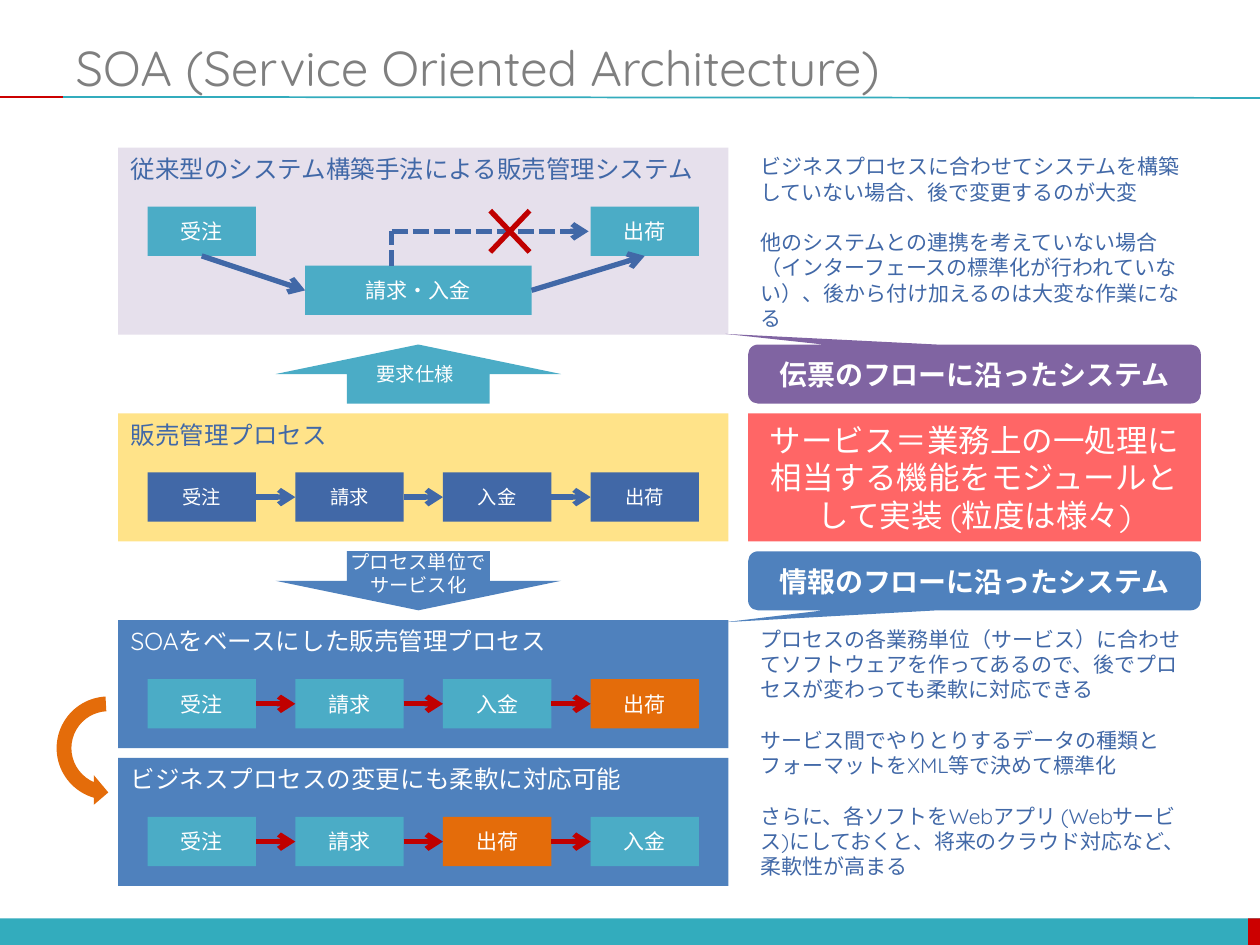
"""Build a slide comparing conventional sales systems with service oriented architecture."""
from lxml import etree
from pptx import Presentation
from pptx import util as u
from pptx.dml.color import RGBColor
from pptx.enum import dml, shapes, text
from pptx.oxml import ns

presentation = Presentation()
presentation.slide_width, presentation.slide_height = u.Inches(10), u.Inches(7.5)
slide = presentation.slides.add_slide(presentation.slide_layouts[5])
unit = presentation.slide_width / 128

FONT = "Quicksand"
WHITE, NAVY, BLUE, TEAL = "FFFFFF", "4168A7", "4F81BD", "4BACC6"
RED, ORANGE, PURPLE, RULE = "C00000", "E46C0A", "8064A2", "33ACBD"
KIND = shapes.MSO_SHAPE
LEFT, CENTER = text.PP_ALIGN.LEFT, text.PP_ALIGN.CENTER
TOP, MIDDLE = text.MSO_ANCHOR.TOP, text.MSO_ANCHOR.MIDDLE
FIRST_COLUMN, STEP, BOX_WIDTH, BOX_HEIGHT = 15, 15, 11, 5
PANEL, PANEL_WIDTH, SIDE, SIDE_WIDTH = 12, 62, 76, 46


def add_block(kind, box, lines=(), fill=None, size=12, color=WHITE, align=CENTER,
              anchor=MIDDLE, bold=False, gap=0, adjustments=()):
    """Place a shape, text box or the title on the grid and format its text."""
    if kind == "title":
        shape = slide.shapes.title
    elif kind == "text":
        shape = slide.shapes.add_textbox(0, 0, 0, 0)
    else:
        shape = slide.shapes.add_shape(kind, 0, 0, 0, 0)
        shape.shadow.inherit = False
        shape.line.fill.background()
        shape.fill.solid()
        shape.fill.fore_color.rgb = RGBColor.from_string(fill)
    for name, value in zip(("left", "top", "width", "height"), box):
        setattr(shape, name, round(value * unit))
    for index, value in enumerate(adjustments):
        shape.adjustments[index] = value
    frame = shape.text_frame
    frame.auto_size = text.MSO_AUTO_SIZE.NONE
    frame.word_wrap, frame.vertical_anchor = True, anchor
    for index, line in enumerate(lines):
        paragraph = frame.add_paragraph() if index else frame.paragraphs[0]
        paragraph.alignment = align
        paragraph.space_before = u.Pt(gap if index else 0)
        run = paragraph.add_run()
        run.text = line
        for name, value in {"name": FONT, "size": u.Pt(size), "bold": bold}.items():
            setattr(run.font, name, value)
        run.font.color.rgb = RGBColor.from_string(color)
    return shape


def add_line(start, end, color, width=3, arrow=True, dash=None):
    """Draw a straight connector between two grid points."""
    points = [round(value * unit) for value in (*start, *end)]
    connector = slide.shapes.add_connector(shapes.MSO_CONNECTOR.STRAIGHT, *points)
    connector.line.width = u.Pt(width)
    connector.line.color.rgb = RGBColor.from_string(color)
    if dash:
        connector.line.dash_style = dash
    properties = connector._element.spPr
    if arrow:
        etree.SubElement(properties.find(ns.qn("a:ln")), ns.qn("a:tailEnd"), type="arrow")
    etree.SubElement(properties, ns.qn("a:effectLst"))


add_block(KIND.RECTANGLE, (0, 93.3, 128, 2.8), fill=RULE)
add_block(KIND.RECTANGLE, (126.8, 93.3, 1.2, 2.8), fill="CC0000")
add_line((6.4, 9.85), (128, 9.95), RULE, width=1, arrow=False)
add_line((0, 9.85), (6.4, 9.85), "CC0000", width=1, arrow=False)
add_block("title", (6.4, 3.84, 121.6, 5.9), ["SOA (Service Oriented Architecture)"],
          size=28, color="7F7F7F", align=LEFT)

panels = [
    (15, 19, "E6E0EC", NAVY, "従来型のシステム構築手法による販売管理システム"),
    (42, 13, "FFE389", NAVY, "販売管理プロセス"),
    (63, 13, BLUE, WHITE, "SOAをベースにした販売管理プロセス"),
    (77, 13, BLUE, WHITE, "ビジネスプロセスの変更にも柔軟に対応可能"),
]
for row, height, fill, color, heading in panels:
    add_block(KIND.ROUNDED_RECTANGLE, (PANEL, row, PANEL_WIDTH, height), [heading], fill, 14,
              color, LEFT, TOP, adjustments=[0])

flows = [
    (48, NAVY, NAVY, 11, ["受注", "請求", "入金", "出荷"], None),
    (69, TEAL, RED, 12, ["受注", "請求", "入金", "出荷"], 3),
    (83, TEAL, RED, 12, ["受注", "請求", "出荷", "入金"], 2),
]
for row, fill, arrow_color, size, steps, highlight in flows:
    middle = row + BOX_HEIGHT / 2
    for index, step in enumerate(steps):
        column = FIRST_COLUMN + index * STEP
        add_block(KIND.ROUNDED_RECTANGLE, (column, row, BOX_WIDTH, BOX_HEIGHT), [step],
                  ORANGE if index == highlight else fill, size, adjustments=[0])
        if index:
            add_line((column - STEP + BOX_WIDTH, middle), (column, middle), arrow_color)

for column, row, width, step in [(15, 21, 11, "受注"), (31, 27, 23, "請求・入金"),
                                 (60, 21, 11, "出荷")]:
    add_block(KIND.ROUNDED_RECTANGLE, (column, row, width, BOX_HEIGHT), [step], TEAL,
              adjustments=[0])
add_line((20.5, 26), (31, 29.5), NAVY)
add_line((54, 29.5), (65.5, 26), NAVY)
dash = dml.MSO_LINE.SQUARE_DOT
add_line((39.8, 27), (39.8, 23.5), NAVY, arrow=False, dash=dash)
add_line((39.8, 23.5), (59.8, 23.5), NAVY, dash=dash)
for start, end in [(21.4, 25.6), (25.6, 21.4)]:
    add_line((49.8, start), (53.8, end), RED, arrow=False)

add_block(KIND.UP_ARROW, (28, 35, 29, 6), fill=TEAL)
add_block(KIND.UP_ARROW, (28, 56, 29, 6), fill=BLUE).rotation = 180
add_block("text", (37, 36.2, 11, 3.7), ["要求仕様"], size=11, align=LEFT, anchor=TOP)
add_block("text", (28.5, 55.3, 28, 6), ["プロセス単位で", "サービス化"], size=11, anchor=TOP)

loop = add_block(KIND.CIRCULAR_ARROW, (5, 70, 12, 12), fill=ORANGE,
                 adjustments=[0.125, 11.42, 204.58, 109.84, 0.125])
loop.rotation = 270
loop._element.spPr.find(ns.qn("a:xfrm")).set("flipH", "1")

notes = [
    (15, 19.4, ["ビジネスプロセスに合わせてシステムを構築していない場合、後で変更するのが大変",
                "他のシステムとの連携を考えていない場合（インターフェースの標準化が行われていない）、"
                "後から付け加えるのは大変な作業になる"]),
    (63, 27.1, ["プロセスの各業務単位（サービス）に合わせてソフトウェアを作ってあるので、"
                "後でプロセスが変わっても柔軟に対応できる",
                "サービス間でやりとりするデータの種類とフォーマットをXML等で決めて標準化",
                "さらに、各ソフトをWebアプリ (Webサービス)にしておくと、"
                "将来のクラウド対応など、柔軟性が高まる"]),
]
for row, height, lines in notes:
    add_block("text", (SIDE, row, SIDE_WIDTH, height), lines, color=NAVY, align=LEFT,
              anchor=TOP, gap=14.5)

callouts = [
    (35, PURPLE, -0.68, "伝票のフローに沿ったシステム"),
    (56, BLUE, 0.7, "情報のフローに沿ったシステム"),
]
for row, fill, tip, message in callouts:
    add_block(KIND.ROUNDED_RECTANGULAR_CALLOUT, (SIDE, row, SIDE_WIDTH, 6), [message], fill,
              16, bold=True, adjustments=[-0.55, tip, 0.17])
add_block(KIND.RECTANGLE, (SIDE, 42, SIDE_WIDTH, 13),
          ["サービス＝業務上の一処理に相当する機能をモジュールとして実装 (粒度は様々)"],
          "FF6666", 18)

presentation.save("out.pptx")
